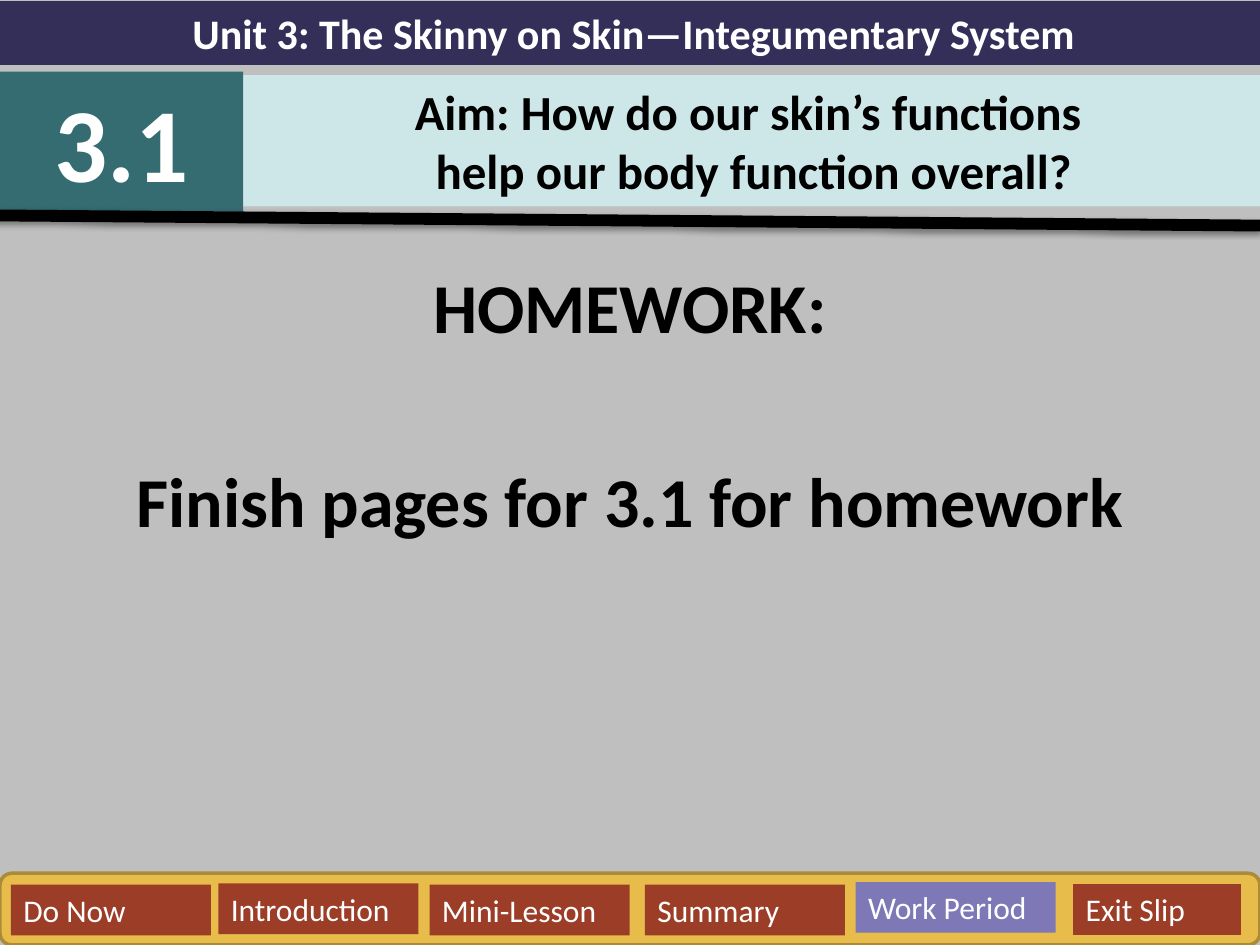
from dataclasses import dataclass

from lxml.etree import SubElement
from pptx import Presentation
from pptx.dml.color import RGBColor as RGB
from pptx.enum.shapes import MSO_CONNECTOR as LINK, MSO_SHAPE as SHAPE
from pptx.enum.text import MSO_ANCHOR as ANCHOR, PP_ALIGN as ALIGN
from pptx.oxml.ns import qn
from pptx.util import Pt


@dataclass(frozen=True)
class Theme:
    font: str = "Calibri"
    back: str = "BFBFBF"
    black: str = "000000"
    white: str = "FFFFFF"
    navy: str = "342F59"
    teal: str = "346C71"
    pale: str = "CDE6E8"
    gold: str = "E8BC4A"
    edge: str = "AC8B37"
    rust: str = "9C3D28"
    violet: str = "7E78B7"
    tab: int = 18
    unit: int = 24
    aim: int = 28
    body: int = 40
    number: int = 60


T = Theme()
color = RGB.from_string

deck = Presentation()
deck.slide_width, deck.slide_height = Pt(720), Pt(540)
slide = deck.slides.add_slide(deck.slide_layouts[6])
slide.background.fill.solid()
slide.background.fill.fore_color.rgb = color(T.back)
shapes = slide.shapes


def write(box, lines, size, ink, bold=True, align=ALIGN.CENTER, gap=0):
    """Fill a box with one paragraph per line, gap points apart."""
    frame = box.text_frame
    frame.word_wrap = True
    frame.vertical_anchor = ANCHOR.TOP
    frame.text = "\n".join(lines)
    for i, para in enumerate(frame.paragraphs):
        para.alignment = align
        para.space_before = Pt(gap if i else 0)
        font = para.font
        font.name, font.size, font.bold = T.font, Pt(size), bold
        font.color.rgb = color(ink)


def block(area, fill, kind=SHAPE.RECTANGLE):
    """Add a flat shape without an outline."""
    box = shapes.add_shape(kind, *map(Pt, area))
    box.shadow.inherit = False
    box.fill.solid()
    box.fill.fore_color.rgb = color(fill)
    box.line.fill.background()
    return box


# Homework
task = shapes.add_textbox(Pt(0), Pt(146.9), Pt(720), Pt(393))
write(task, ["HOMEWORK:", "Finish pages for 3.1 for homework"],
      T.body, T.black, gap=62.8)

# Header
heads = [
    ((0, 0.7, 724.3, 36.4), T.navy, T.unit, T.white,
     ["Unit 3: The Skinny on Skin—Integumentary System"]),
    ((0, 41, 139, 80), T.teal, T.number, T.white, ["3.1"]),
    ((139, 43, 583, 75), T.pale, T.aim, T.black,
     ["Aim: How do our skin’s functions ", "help our body function overall?"]),
]
for area, fill, size, ink, lines in heads:
    write(block(area, fill), lines, size, ink)

# Rule with a soft shadow below
rule = shapes.add_connector(LINK.STRAIGHT, Pt(-3.6), Pt(123.1), Pt(720), Pt(128.9))
rule.line.color.rgb = color(T.black)
rule.line.width = Pt(6.75)
effects = SubElement(rule._element.spPr, qn("a:effectLst"))
shade = SubElement(effects, qn("a:outerShdw"), blurRad=str(Pt(3.1)),
                   dist=str(Pt(1.6)), dir="5400000", rotWithShape="0")
tint = SubElement(shade, qn("a:srgbClr"), val=T.black)
SubElement(tint, qn("a:alpha"), val="38000")

# Lesson tabs
bar = block((0, 499, 720, 41), T.gold, SHAPE.ROUNDED_RECTANGLE)
bar.line.color.rgb = color(T.edge)
bar.line.width = Pt(2)

tabs = [
    ("Do Now", 6.3, 505.5, 114.3, T.rust),
    ("Introduction", 124.8, 504.8, 114.3, T.rust),
    ("Mini-Lesson", 245.5, 505.5, 114.3, T.rust),
    ("Summary", 368.6, 505.5, 114.3, T.rust),
    ("Work Period", 489, 504, 114.3, T.violet),
    ("Exit Slip", 613.3, 505.2, 95.8, T.rust),
]
for name, left, top, width, fill in tabs:
    write(block((left, top, width, 29), fill), [name], T.tab, T.white,
          bold=False, align=ALIGN.LEFT)

deck.save("out.pptx")
